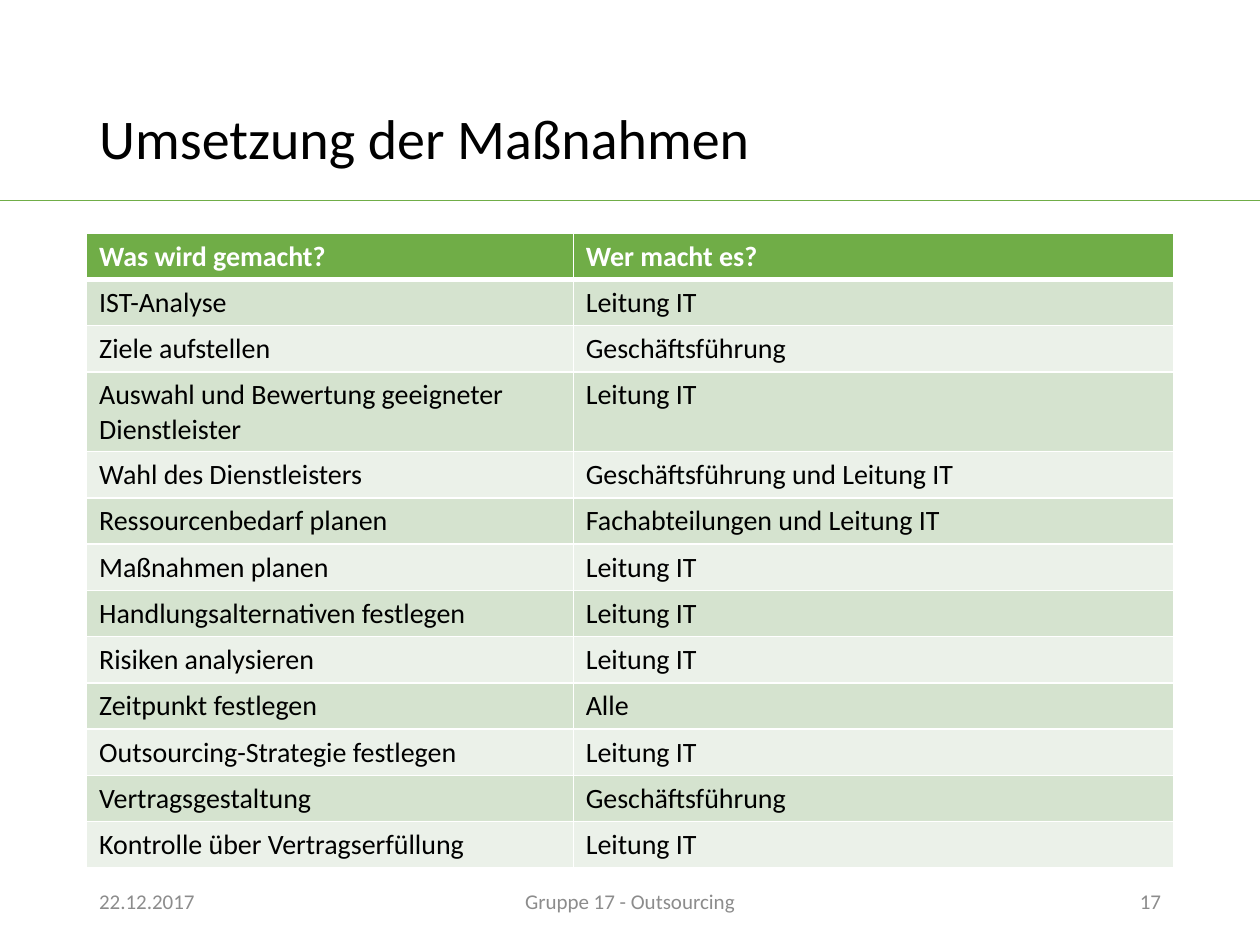
import pptx
import pptx.util
import pptx.dml.color
import pptx.enum.shapes
import pptx.enum.text
import pptx.oxml.ns
from lxml import etree

RGBColor = pptx.dml.color.RGBColor
Pt = pptx.util.Pt
ALIGN = pptx.enum.text.PP_ALIGN
MIDDLE = pptx.enum.text.MSO_ANCHOR.MIDDLE
qn = pptx.oxml.ns.qn

GREEN = RGBColor(0x70, 0xAD, 0x47)
BAND_DARK = RGBColor(0xD5, 0xE3, 0xCF)
BAND_LIGHT = RGBColor(0xEB, 0xF1, 0xE9)
GREY = RGBColor(0x8C, 0x8C, 0x8C)
BLACK = RGBColor(0, 0, 0)
WHITE = RGBColor(0xFF, 0xFF, 0xFF)

WIDTH, HEIGHT = pptx.util.Inches(10), pptx.util.Inches(7.5)
UNIT = WIDTH / 160
LEFT, CONTENT = 11, 138
ROW, TALL_ROW = 5.6, 9.6

TASKS = [
    ("Was wird gemacht?", "Wer macht es?"),
    ("IST-Analyse", "Leitung IT"),
    ("Ziele aufstellen", "Geschäftsführung"),
    ("Auswahl und Bewertung geeigneter Dienstleister", "Leitung IT"),
    ("Wahl des Dienstleisters", "Geschäftsführung und Leitung IT"),
    ("Ressourcenbedarf planen", "Fachabteilungen und Leitung IT"),
    ("Maßnahmen planen", "Leitung IT"),
    ("Handlungsalternativen festlegen", "Leitung IT"),
    ("Risiken analysieren", "Leitung IT"),
    ("Zeitpunkt festlegen", "Alle"),
    ("Outsourcing-Strategie festlegen", "Leitung IT"),
    ("Vertragsgestaltung", "Geschäftsführung"),
    ("Kontrolle über Vertragserfüllung", "Leitung IT"),
]


def grid(*units):
    """Convert grid units to slide lengths."""
    return [round(u * UNIT) for u in units]


def write(tf, text, size, color, align=ALIGN.LEFT, bold=False):
    """Fill a text frame with one formatted paragraph."""
    tf.text = text
    p = tf.paragraphs[0]
    p.alignment = align
    font = p.runs[0].font
    font.name, font.size, font.bold = "Calibri", Pt(size), bold
    font.color.rgb = color


def add_rule(s, y):
    """Draw the thin green line across the slide."""
    x1, y1, x2, y2 = grid(0, y, 160, y)
    line = s.shapes.add_connector(
        pptx.enum.shapes.MSO_CONNECTOR.STRAIGHT, x1, y1, x2, y2)
    line.line.color.rgb = GREEN
    line.line.width = Pt(0.5)
    etree.SubElement(line._element.spPr, qn("a:effectLst"))


def add_title(s, text, x, y, w, h):
    """Place and format the title placeholder."""
    sp = s.shapes.title
    sp.left, sp.top, sp.width, sp.height = grid(x, y, w, h)
    write(sp.text_frame, text, 32, BLACK)
    sp.text_frame.vertical_anchor = MIDDLE
    sp.text_frame.paragraphs[0].line_spacing = 0.9


def add_footer(s, x, y, w, h):
    """Place date, footer text and page number in the given strip."""
    side, centre = 36, 54
    parts = [
        ("22.12.2017", x, side, ALIGN.LEFT),
        ("Gruppe 17 - Outsourcing", x + (w - centre) / 2, centre, ALIGN.CENTER),
        ("17", x + w - side, side, ALIGN.RIGHT),
    ]
    for text, left, width, align in parts:
        tf = s.shapes.add_textbox(*grid(left, y, width, h)).text_frame
        tf.word_wrap = True
        tf.vertical_anchor = MIDDLE
        write(tf, text, 12, GREY, align)


def set_borders(cell, bottom, top):
    """Give a cell white borders of the given bottom and top widths."""
    tc_pr = cell._tc.get_or_add_tcPr()
    for side, width in (("L", 1), ("R", 1), ("T", top), ("B", bottom)):
        ln = etree.SubElement(tc_pr, qn("a:ln" + side), w=str(Pt(width)))
        fill = etree.SubElement(ln, qn("a:solidFill"))
        etree.SubElement(fill, qn("a:srgbClr"), val=str(WHITE))


def add_task_table(s, x, y, w, h):
    """Build the table of tasks and responsible parties."""
    frame = s.shapes.add_table(len(TASKS), 2, *grid(x, y, w, h))
    table = frame.table
    first = 61.8
    for column, width in zip(table.columns, grid(first, w - first)):
        column.width = width
    for i, texts in enumerate(TASKS):
        header = i == 0
        tall = len(texts[0]) > 40
        table.rows[i].height = grid(TALL_ROW if tall else ROW)[0]
        fill = GREEN if header else BAND_DARK if i % 2 else BAND_LIGHT
        for j, text in enumerate(texts):
            cell = table.cell(i, j)
            write(cell.text_frame, text, 16, WHITE if header else BLACK, bold=header)
            set_borders(cell, 3 if header else 1, 3 if i == 1 else 1)
            cell.fill.solid()
            cell.fill.fore_color.rgb = fill
    frame.height = grid(h)[0]


def main():
    """Build and save the slide."""
    prs = pptx.Presentation()
    prs.slide_width, prs.slide_height = WIDTH, HEIGHT
    s = prs.slides.add_slide(prs.slide_layouts[5])
    s.background.fill.solid()
    s.background.fill.fore_color.rgb = WHITE
    add_rule(s, 25.4)
    add_title(s, "Umsetzung der Maßnahmen", LEFT, 6.4, CONTENT, 23.2)
    add_footer(s, LEFT, 111.2, CONTENT, 6.4)
    add_task_table(s, LEFT, 29.6, CONTENT, 80.5)
    prs.save("out.pptx")


if __name__ == "__main__":
    main()
